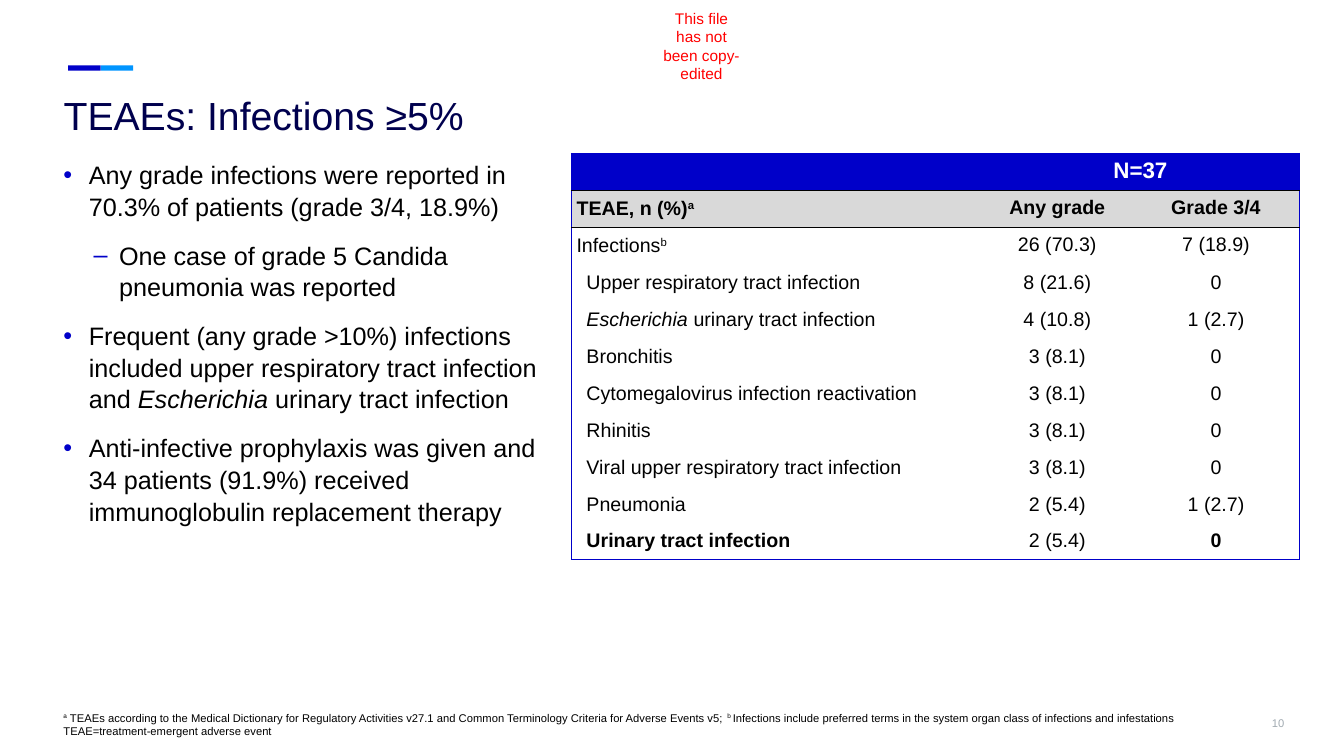
from lxml import etree
from pptx import Presentation
from pptx.dml.color import RGBColor
from pptx.enum.shapes import MSO_SHAPE
from pptx.enum.text import MSO_ANCHOR, MSO_AUTO_SIZE, PP_ALIGN
from pptx.oxml.ns import qn
from pptx.util import Cm, Pt

LEFT, CENTER, RIGHT = PP_ALIGN.LEFT, PP_ALIGN.CENTER, PP_ALIGN.RIGHT
TOP, MIDDLE, BOTTOM = MSO_ANCHOR.TOP, MSO_ANCHOR.MIDDLE, MSO_ANCHOR.BOTTOM
RECTANGLE = MSO_SHAPE.RECTANGLE
NO_AUTOFIT = MSO_AUTO_SIZE.NONE

COLORS = {
    "blue": "0000C9", "sky": "0095FF", "navy": "00004E", "red": "FF0000",
    "black": "000000", "white": "FFFFFF", "gray": "D9D9D9", "slate": "A1AAB1",
}
FONT = "Arial"
NO_TABLE_STYLE = "{2D5ABB26-0587-4C30-8999-92F81FD0307C}"

SPECIES = ("Escherichia", "italic")
# Level and text of each finding
FINDINGS = [
    (0, "Any grade infections were reported in 70.3% of patients (grade 3/4, 18.9%)"),
    (1, "One case of grade 5 Candida pneumonia was reported"),
    (0, ["Frequent (any grade >10%) infections included upper respiratory tract "
         "infection and ", SPECIES, " urinary tract infection"]),
    (0, "Anti-infective prophylaxis was given and 34 patients (91.9%) received "
        "immunoglobulin replacement therapy"),
]
EVENTS = [
    ("", "N=37", ""),
    (["TEAE, n (%)", ("a", "super")], "Any grade", "Grade 3/4"),
    (["Infections", ("b", "super")], "26 (70.3)", "7 (18.9)"),
    ("Upper respiratory tract infection", "8 (21.6)", "0"),
    ([SPECIES, " urinary tract infection"], "4 (10.8)", "1 (2.7)"),
    ("Bronchitis", "3 (8.1)", "0"),
    ("Cytomegalovirus infection reactivation", "3 (8.1)", "0"),
    ("Rhinitis", "3 (8.1)", "0"),
    ("Viral upper respiratory tract infection", "3 (8.1)", "0"),
    ("Pneumonia", "2 (5.4)", "1 (2.7)"),
    ("Urinary tract infection", "2 (5.4)", "0"),
]
FOOTNOTE = [
    ("a", "super"),
    " TEAEs according to the Medical Dictionary for Regulatory Activities v27.1 and "
    "Common Terminology Criteria for Adverse Events v5; ",
    ("b ", "super"),
    "Infections include preferred terms in the system organ class of infections and "
    "infestations\vTEAE=treatment-emergent adverse event",
]


def rgb(color):
    return RGBColor.from_string(COLORS[color])


def write(paragraph, text, size=14, color="black", bold=False, align=LEFT):
    """Fill a paragraph; text is a string or a list of strings and (text, style) pairs."""
    paragraph.alignment = align
    for part in [text] if isinstance(text, str) else text:
        words, style = (part, "") if isinstance(part, str) else part
        for index, line in enumerate(words.split("\v")):
            if index:
                paragraph.add_line_break()
            if not line:
                continue
            run = paragraph.add_run()
            run.text = line
            font = run.font
            font.name, font.size, font.bold = FONT, Pt(size), bold
            font.italic = style == "italic"
            font.color.rgb = rgb(color)
            if style == "super":
                run._r.get_or_add_rPr().set("baseline", "30000")


def add_color(parent, color):
    etree.SubElement(parent, qn("a:srgbClr"), val=COLORS[color])


def set_borders(cell, borders):
    """Draw the sides named in borders (L, R, T, B) and clear the rest."""
    properties = cell._tc.get_or_add_tcPr()
    for side in "LRTB":
        line = etree.SubElement(properties, qn("a:ln" + side), w=str(Pt(1)))
        if side in borders:
            add_color(etree.SubElement(line, qn("a:solidFill")), borders[side])
        else:
            etree.SubElement(line, qn("a:noFill"))


def set_bullet(paragraph, symbol, indent, hanging):
    properties = paragraph._p.get_or_add_pPr()
    properties.set("marL", str(Cm(indent)))
    properties.set("indent", str(-Cm(hanging)))
    add_color(etree.SubElement(properties, qn("a:buClr")), "blue")
    etree.SubElement(properties, qn("a:buFont"), typeface=FONT)
    etree.SubElement(properties, qn("a:buChar"), char=symbol)


class SlideBuilder:
    def __init__(self, presentation):
        self.slide = presentation.slides.add_slide(presentation.slide_layouts[5])
        self.shapes = self.slide.shapes

    def bar(self, left, top, width, height, color):
        bar = self.shapes.add_shape(RECTANGLE, Cm(left), Cm(top), Cm(width), Cm(height))
        bar.shadow.inherit = False
        bar.fill.solid()
        bar.fill.fore_color.rgb = rgb(color)
        bar.line.fill.background()

    def title(self, text, left, top, width, height):
        title = self.shapes.title
        title.left, title.top = Cm(left), Cm(top)
        title.width, title.height = Cm(width), Cm(height)
        title.text_frame.auto_size = NO_AUTOFIT
        title.text_frame.vertical_anchor = MIDDLE
        write(title.text_frame.paragraphs[0], text, size=28, color="navy")

    def frame(self, left, top, width, height, anchor=TOP, wrap=True):
        box = self.shapes.add_textbox(Cm(left), Cm(top), Cm(width), Cm(height))
        box.text_frame.word_wrap = wrap
        box.text_frame.vertical_anchor = anchor
        return box.text_frame

    def label(self, text, *place, anchor=TOP, wrap=True, **style):
        write(self.frame(*place, anchor, wrap).paragraphs[0], text, **style)

    def bullets(self, items, *place):
        frame = self.frame(*place)
        for index, (level, text) in enumerate(items):
            paragraph = frame.add_paragraph() if index else frame.paragraphs[0]
            paragraph.level = level
            paragraph.line_spacing = 1.05
            paragraph.space_before = Pt(6 if index else 0)
            paragraph.space_after = Pt(6)
            set_bullet(paragraph, "•–"[level], 0.64 + 0.76 * level, 0.64)
            write(paragraph, text, size=18)

    def event_table(self, events, left, top, widths, row_height):
        last_row, last_column = len(events) - 1, len(widths) - 1
        table = self.shapes.add_table(
            len(events), len(widths), Cm(left), Cm(top),
            Cm(sum(widths)), Cm(row_height * len(events))).table
        table.first_row = table.horz_banding = False
        table._tbl.tblPr.find(qn("a:tableStyleId")).text = NO_TABLE_STYLE
        for column, width in zip(table.columns, widths):
            column.width = Cm(width)
        for row in table.rows:
            row.height = Cm(row_height)
        table.cell(0, 1).merge(table.cell(0, last_column))

        for r, event in enumerate(events):
            fill = ("blue", "gray")[r] if r < 2 else "white"
            for c, text in enumerate(event):
                cell = table.cell(r, c)
                borders = {}
                if c == 0:
                    borders["L"] = "blue"
                if c == last_column or (r, c) == (0, 1):
                    borders["R"] = "blue"
                if r <= 2:
                    borders["T"] = "black" if r else "blue"
                if r < 2 or r == last_row:
                    borders["B"] = "black" if r < 2 else "blue"
                set_borders(cell, borders)
                cell.fill.solid()
                cell.fill.fore_color.rgb = rgb(fill)
                cell.vertical_anchor = MIDDLE
                indent = 0.25 if c == 0 and r > 2 else 0
                cell.margin_left, cell.margin_right = Cm(0.13 + indent), Cm(0.13)
                cell.margin_top = Cm(0.05 if c == 0 or r > 2 else 0)
                cell.margin_bottom = Cm(0.05)
                write(cell.text_frame.paragraphs[0], text,
                      size=14 if r else 16, color="black" if r else "white",
                      bold=r < 2 or (r == last_row and c != 1),
                      align=CENTER if c else LEFT)


def main():
    presentation = Presentation()
    presentation.slide_width, presentation.slide_height = Cm(33.87), Cm(19.05)
    page = SlideBuilder(presentation)

    for index, color in enumerate(("blue", "sky")):
        page.bar(1.72 + 0.82 * index, 1.65, 0.82, 0.13, color)
    page.label("This file has not been copy-edited", 16.41, 0.1, 2.54, 0.6,
               wrap=False, size=11, color="red", align=CENTER)
    page.title("TEAEs: Infections ≥5%", 1.35, 2.05, 31.7, 1.7)
    page.bullets(FINDINGS, 1.35, 3.86, 12.9, 10.16)
    page.event_table(EVENTS, 14.4, 3.87, (10.34, 3.81, 4.19), 0.93)
    page.label(FOOTNOTE, 1.35, 17.78, 31.17, 0.94, anchor=BOTTOM, size=8)
    page.label("10", 30.59, 17.5, 2.03, 1.45, anchor=MIDDLE,
               size=8, color="slate", align=RIGHT)
    presentation.save("out.pptx")


if __name__ == "__main__":
    main()
